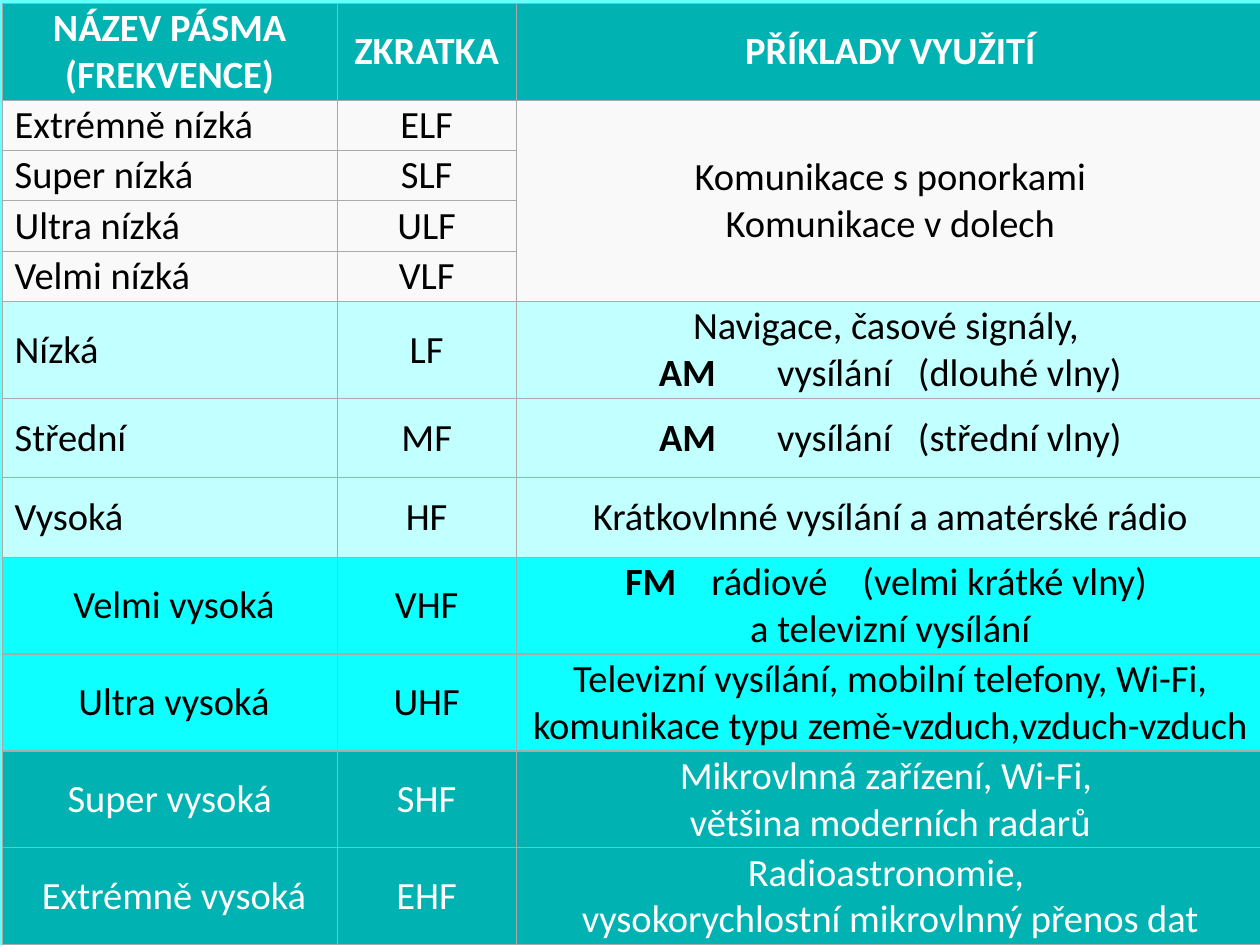
from dataclasses import dataclass

from lxml import etree
from pptx import Presentation
from pptx import util as u
from pptx.dml.color import RGBColor
from pptx.enum import text
from pptx.oxml import ns

COLORS = {
    "page": "66FFFF", "border": "AAAAAA", "white": "FFFFFF", "black": "000000",
    "teal": "00B2B2", "grey": "F9F9F9", "pale": "C2FFFF", "cyan": "0DFFFF",
}
FONT, SIZE, BORDER = "Calibri", u.Pt(22), u.Pt(0.75)
COL_WIDTHS = (191.5, 102.25, 427.7)
ONE_LINE, TWO_LINES, ROOMY = 28.75, 55.4, 45.36
MARGINS = {"margin_left": u.Pt(2.2), "margin_right": u.Pt(2.2),
           "margin_top": u.Pt(0.7), "margin_bottom": u.Pt(0.7)}
NAME_INDENT = u.Pt(7.2)
CENTER, LEFT = text.PP_ALIGN.CENTER, text.PP_ALIGN.LEFT


@dataclass
class Run:
    words: str
    bold: bool = False
    spacing: float = 0  # extra letter spacing, widens a single space


@dataclass
class Band:
    name: str
    code: str
    uses: list  # runs; "\v" breaks a line, "\n" starts a paragraph
    fill: str
    height: float = TWO_LINES
    ink: str = "black"
    align: int = CENTER


def am_runs(waves: str) -> list:
    return [Run("AM", True), Run(" ", spacing=30), Run("vysílání"),
            Run(" ", spacing=10), Run(f"({waves} vlny)")]


BANDS = [
    Band("Extrémně nízká", "ELF", [Run("Komunikace s ponorkami\nKomunikace v dolech")],
         "grey", ONE_LINE, align=LEFT),
    Band("Super nízká", "SLF", [], "grey", ONE_LINE, align=LEFT),
    Band("Ultra nízká", "ULF", [], "grey", ONE_LINE, align=LEFT),
    Band("Velmi nízká", "VLF", [], "grey", ONE_LINE, align=LEFT),
    Band("Nízká", "LF", [Run("Navigace, časové signály, \v"), *am_runs("dlouhé")],
         "pale", align=LEFT),
    Band("Střední", "MF", am_runs("střední"), "pale", ROOMY, align=LEFT),
    Band("Vysoká", "HF", [Run("Krátkovlnné vysílání a amatérské rádio")],
         "pale", ROOMY, align=LEFT),
    Band("Velmi vysoká", "VHF",
         [Run("FM", True), Run(" ", spacing=15), Run("rádiové"), Run(" ", spacing=15),
          Run("(velmi krátké vlny) \va televizní vysílání")], "cyan"),
    Band("Ultra vysoká", "UHF",
         [Run("Televizní vysílání, mobilní telefony, Wi-Fi, "
              "komunikace typu země-vzduch,vzduch-vzduch")], "cyan"),
    Band("Super vysoká ", "SHF",
         [Run("Mikrovlnná zařízení, Wi-Fi, \vvětšina moderních radarů")],
         "teal", ink="white"),
    Band("Extrémně vysoká", "EHF",
         [Run("Radioastronomie, \vvysokorychlostní mikrovlnný přenos dat")],
         "teal", ink="white"),
]
HEADERS = ("NÁZEV PÁSMA\v(FREKVENCE)", "ZKRATKA", "PŘÍKLADY VYUŽITÍ")


def rgb(name: str) -> RGBColor:
    return RGBColor.from_string(COLORS[name])


def set_attrs(obj, values: dict) -> None:
    for key, value in values.items():
        setattr(obj, key, value)


def add_borders(cell) -> None:
    props = cell._tc.get_or_add_tcPr()
    for i, side in enumerate("LRTB"):
        line = etree.Element(ns.qn(f"a:ln{side}"), w=str(int(BORDER)))
        fill = etree.SubElement(line, ns.qn("a:solidFill"))
        etree.SubElement(fill, ns.qn("a:srgbClr"), val=COLORS["border"])
        props.insert(i, line)


def add_run(p, run: Run, words: str, ink: str) -> None:
    r = p.add_run()
    r.text = words
    set_attrs(r.font, {"name": FONT, "size": SIZE, "bold": run.bold})
    r.font.color.rgb = rgb(ink)
    if run.spacing:
        r._r.get_or_add_rPr().set("spc", str(int(run.spacing * 100)))


def fill_cell(cell, runs: list, fill: str, ink: str, align=CENTER) -> None:
    set_attrs(cell, {**MARGINS, "vertical_anchor": text.MSO_ANCHOR.MIDDLE})
    cell.fill.solid()
    cell.fill.fore_color.rgb = rgb(fill)
    add_borders(cell)
    tf = cell.text_frame
    p = tf.paragraphs[0]
    p.alignment = align
    p.font.size = SIZE
    for run in runs:
        for i, para in enumerate(run.words.split("\n")):
            if i:
                p = tf.add_paragraph()
                p.alignment = align
            for j, words in enumerate(para.split("\v")):
                if j:
                    p.add_line_break()
                    p._p.findall(ns.qn("a:br"))[-1].get_or_add_rPr().set("sz", "2200") \
                        if hasattr(p._p.findall(ns.qn("a:br"))[-1], "get_or_add_rPr") \
                        else etree.SubElement(p._p.findall(ns.qn("a:br"))[-1],
                                              ns.qn("a:rPr"), sz="2200")
                if words:
                    add_run(p, run, words, ink)


def main() -> None:
    prs = Presentation()
    set_attrs(prs, {"slide_width": u.Pt(720), "slide_height": u.Pt(540)})
    s = prs.slides.add_slide(prs.slide_layouts[6])
    s.background.fill.solid()
    s.background.fill.fore_color.rgb = rgb("page")

    # Table grid
    heights = [TWO_LINES, *(band.height for band in BANDS)]
    table = s.shapes.add_table(len(heights), len(COL_WIDTHS), u.Pt(1.2), u.Pt(1.9),
                               u.Pt(sum(COL_WIDTHS)), u.Pt(sum(heights))).table
    for col, width in zip(table.columns, COL_WIDTHS):
        col.width = u.Pt(width)
    for row, height in zip(table.rows, heights):
        row.height = u.Pt(height)

    # Header row
    for c, words in enumerate(HEADERS):
        fill_cell(table.cell(0, c), [Run(words, True)], "teal", "white")

    # Frequency bands
    for i, band in enumerate(BANDS, start=1):
        name, code, uses = (table.cell(i, c) for c in range(3))
        fill_cell(name, [Run(band.name)], band.fill, band.ink, band.align)
        name.margin_left = NAME_INDENT
        fill_cell(code, [Run(band.code)], band.fill, band.ink)
        fill_cell(uses, band.uses, band.fill, band.ink)

    # The four lowest bands share one list of uses
    table.cell(1, 2).merge(table.cell(4, 2))
    prs.save("out.pptx")


if __name__ == "__main__":
    main()
